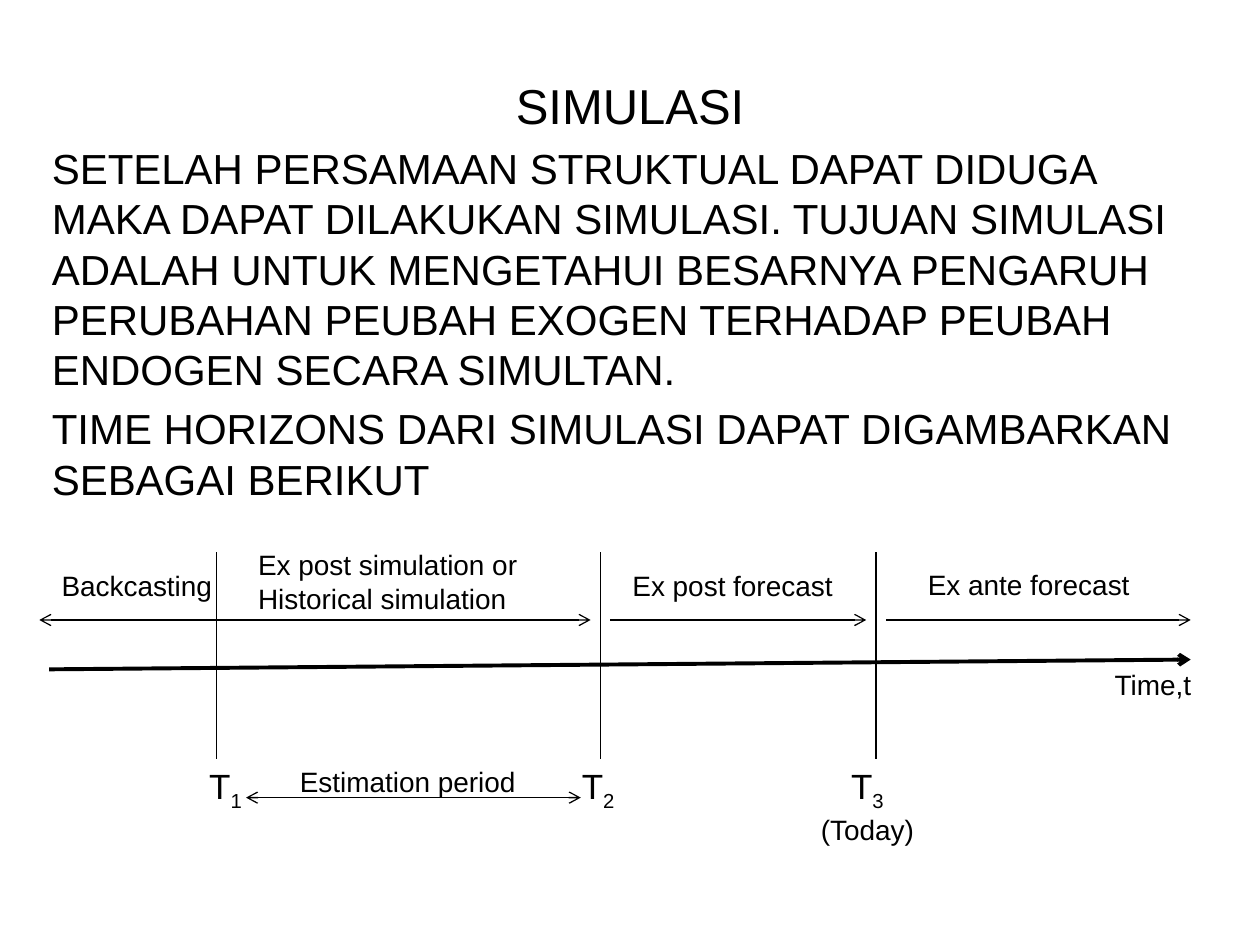
from dataclasses import dataclass
from typing import Any

from lxml.etree import SubElement as sub
from pptx import Presentation
from pptx.dml.color import RGBColor as RGB
from pptx.enum.shapes import MSO_CONNECTOR as LINK, MSO_SHAPE as SHAPE
from pptx.enum.text import MSO_ANCHOR as ANCHOR, MSO_AUTO_SIZE as FIT, PP_ALIGN as ALIGN
from pptx.oxml.ns import qn
from pptx.util import Pt

BLACK = RGB(0, 0, 0)
WHITE = RGB(255, 255, 255)
LEFT, MID = ALIGN.LEFT, ALIGN.CENTER
FONT = "Arial"
TOP, BASE, SPAN = 315.5, 433.5, 354.3  # tick top, tick foot, span arrows
LOW = 455.8  # estimation arrow
END = 680.4  # right end of the time axis


@dataclass
class Para:
    text: str
    size: float
    sub: str = ""
    align: Any = LEFT
    gap: float = 0


@dataclass
class Label:
    x: float
    y: float
    w: float
    h: float
    paras: list[Para]
    wrap: bool = False
    solid: bool = False


@dataclass
class Line:
    x1: float
    y1: float
    x2: float
    y2: float
    width: float = 0.75
    head: bool = False
    tail: bool = False


def small(x: float, y: float, w: float, *rows: str) -> Label:
    return Label(x, y, w, 26.6 if len(rows) == 1 else 46,
                 [Para(row, 16) for row in rows])


def mark(x: float, num: str) -> Label:
    return Label(x, BASE, 34.3, 31.5, [Para("T", 20, num)])


BODY = Label(22.5, 39.4, 675, 466.9, [
    Para("SIMULASI", 28, align=MID),
    Para("SETELAH PERSAMAAN STRUKTUAL DAPAT DIDUGA MAKA DAPAT DILAKUKAN "
         "SIMULASI. TUJUAN SIMULASI ADALAH UNTUK MENGETAHUI BESARNYA PENGARUH "
         "PERUBAHAN PEUBAH EXOGEN TERHADAP PEUBAH ENDOGEN SECARA SIMULTAN.",
         24, gap=4.8),
    Para("TIME HORIZONS DARI SIMULASI DAPAT DIGAMBARKAN SEBAGAI BERIKUT",
         24, gap=4.8),
], wrap=True)

LABELS = [
    small(629.9, 377.9, 59, "Time,t"),
    small(28.1, 321.6, 101.6, "Backcasting"),
    small(140.4, 309.4, 164.2, "Ex post simulation or", "Historical simulation"),
    small(354.3, 321.6, 130.3, "Ex post forecast"),
    small(523.1, 320.6, 131.6, "Ex ante forecast"),
    mark(112.5, "1"),
    mark(325.4, "2"),
    Label(461.6, BASE, 68.2, 51, [Para("T", 20, "3", MID),
                                  Para("(Today)", 16, align=MID)]),
    Label(164.3, BASE, 139, 26.6, [Para("Estimation period", 16)], solid=True),
]

LINES = [
    Line(28.1, 382.5, END, 376.9, 2.25, tail=True),
    *(Line(x, TOP, x, BASE) for x in (123.8, 343.1, 500.6)),
    Line(22.5, SPAN, 337.5, SPAN, head=True, tail=True),
    Line(348.8, SPAN, 495, SPAN, tail=True),
    Line(506.3, SPAN, END, SPAN, tail=True),
    Line(140.6, LOW, 331.9, LOW, head=True, tail=True),
]


def put(obj: Any, **form: Any) -> None:
    """Set each format value on obj."""
    for key, val in form.items():
        setattr(obj, key, val)


def write(para: Any, item: Para) -> None:
    put(para, alignment=item.align, space_before=Pt(item.gap))
    for text, low in ((item.text, False), (item.sub, True)):
        if not text:
            continue
        run = para.add_run()
        run.text = text
        put(run.font, name=FONT, size=Pt(item.size))
        run.font.color.rgb = BLACK
        if low:
            run._r.get_or_add_rPr().set("baseline", "-25000")


def draw_label(shapes: Any, item: Label) -> None:
    area = [Pt(v) for v in (item.x, item.y, item.w, item.h)]
    if item.solid:
        box = shapes.add_shape(SHAPE.RECTANGLE, *area)
        box.shadow.inherit = False
        box.fill.solid()
        box.fill.fore_color.rgb = WHITE
        box.line.fill.background()
    else:
        box = shapes.add_textbox(*area)
    frame = box.text_frame
    put(frame, word_wrap=item.wrap, vertical_anchor=ANCHOR.TOP,
        auto_size=FIT.NONE if item.wrap else FIT.SHAPE_TO_FIT_TEXT)
    for i, para in enumerate(item.paras):
        write(frame.add_paragraph() if i else frame.paragraphs[0], para)


def draw_line(shapes: Any, item: Line) -> None:
    ends = [Pt(v) for v in (item.x1, item.y1, item.x2, item.y2)]
    link = shapes.add_connector(LINK.STRAIGHT, *ends)
    link.line.width = Pt(item.width)
    link.line.color.rgb = BLACK
    ln = link.line._get_or_add_ln()
    for tag, show in (("a:headEnd", item.head), ("a:tailEnd", item.tail)):
        if show:
            sub(ln, qn(tag), type="arrow")
    sub(link._element.spPr, qn("a:effectLst"))


def main() -> None:
    deck = Presentation()
    put(deck, slide_width=Pt(720), slide_height=Pt(540))
    shapes = deck.slides.add_slide(deck.slide_layouts[6]).shapes
    for label in (BODY, *LABELS):
        draw_label(shapes, label)
    for line in LINES:
        draw_line(shapes, line)
    deck.save("out.pptx")


if __name__ == "__main__":
    main()
